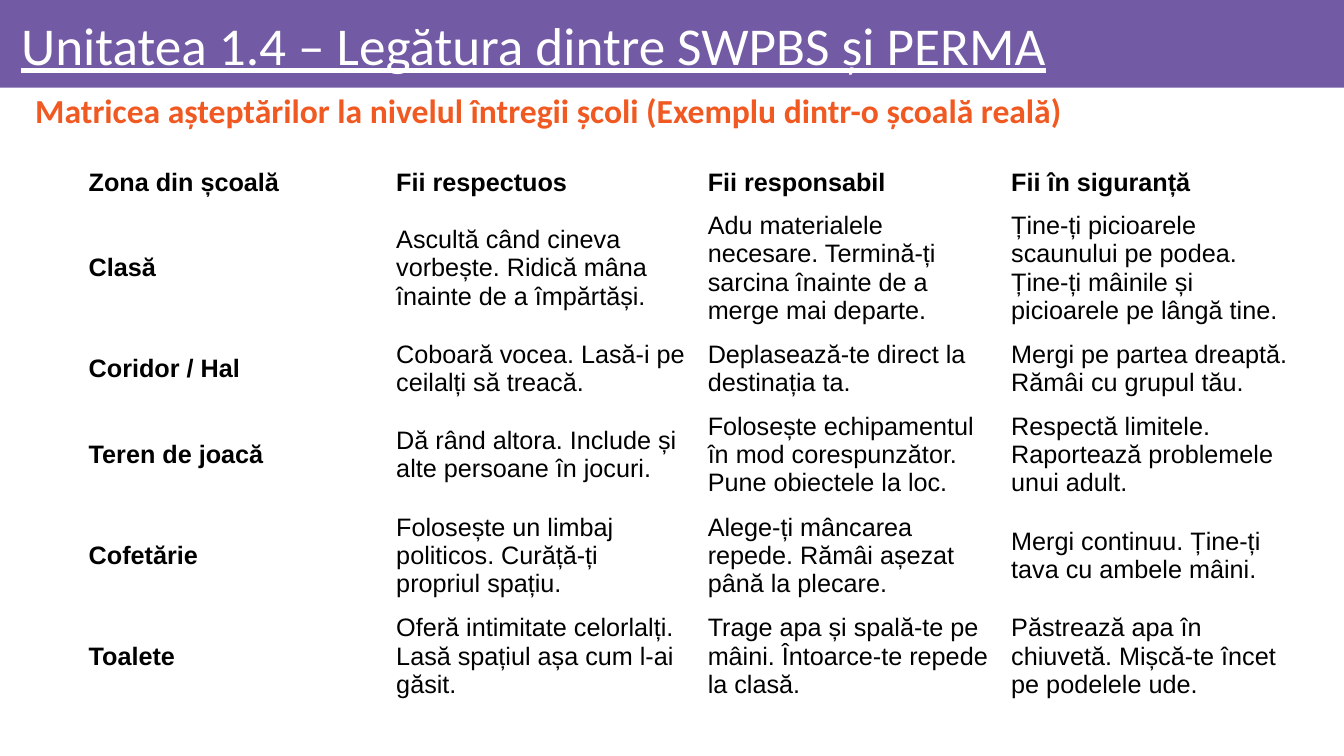
import pptx
import pptx.util
import pptx.dml.color
import pptx.enum.shapes
import pptx.enum.text

W, H = 13.33, 7.5
TITLE = "Unitatea 1.4 – Legătura dintre SWPBS și PERMA"
SUBTITLE = "Matricea așteptărilor la nivelul întregii școli (Exemplu dintr-o școală reală)"
MATRIX = [
    ("Zona din școală", "Fii respectuos", "Fii responsabil", "Fii în siguranță"),
    ("Clasă",
     "Ascultă când cineva vorbește. Ridică mâna înainte de a împărtăși.",
     "Adu materialele necesare. Termină-ți sarcina înainte de a merge mai departe.",
     "Ține-ți picioarele scaunului pe podea. Ține-ți mâinile și picioarele pe lângă tine."),
    ("Coridor / Hal",
     "Coboară vocea. Lasă-i pe ceilalți să treacă.",
     "Deplasează-te direct la destinația ta.",
     "Mergi pe partea dreaptă. Rămâi cu grupul tău."),
    ("Teren de joacă",
     "Dă rând altora. Include și alte persoane în jocuri.",
     "Folosește echipamentul în mod corespunzător. Pune obiectele la loc.",
     "Respectă limitele. Raportează problemele unui adult."),
    ("Cofetărie",
     "Folosește un limbaj politicos. Curăță-ți propriul spațiu.",
     "Alege-ți mâncarea repede. Rămâi așezat până la plecare.",
     "Mergi continuu. Ține-ți tava cu ambele mâini."),
    ("Toalete",
     "Oferă intimitate celorlalți. Lasă spațiul așa cum l-ai găsit.",
     "Trage apa și spală-te pe mâini. Întoarce-te repede la clasă.",
     "Păstrează apa în chiuvetă. Mișcă-te încet pe podelele ude."),
]
COLUMNS = (3.05, 3.09, 3.01, 3.05)
ROW = 0.25
BAR = 0.87

inch = pptx.util.Inches
MIDDLE = pptx.enum.text.MSO_ANCHOR.MIDDLE
LEFT = pptx.enum.text.PP_ALIGN.LEFT


def color(value):
    return pptx.dml.color.RGBColor.from_string(value)


def assign(obj, **values):
    for name, value in values.items():
        setattr(obj, name, value)


def place(sp, left, top, width, height):
    assign(sp, left=inch(left), top=inch(top), width=inch(width), height=inch(height))


def write(tf, text, hue, size, name, spacing=1.0, **font):
    p = tf.paragraphs[0]
    assign(p, alignment=LEFT, line_spacing=spacing)
    r = p.add_run()
    r.text = text
    assign(r.font, size=pptx.util.Pt(size), name=name, **font)
    r.font.color.rgb = color(hue)


def add_title(slide):
    bar = slide.shapes.add_shape(
        pptx.enum.shapes.MSO_SHAPE.RECTANGLE, 0, 0, inch(W), inch(BAR))
    bar.shadow.inherit = False
    bar.fill.solid()
    bar.fill.fore_color.rgb = color("735AA5")
    bar.line.fill.background()
    sp = slide.shapes.title
    sp._element.addprevious(bar._element)
    place(sp, 0.11, 0.09, 13.06, 0.78)
    assign(sp.text_frame, vertical_anchor=MIDDLE, word_wrap=True,
           margin_left=inch(0.1), margin_right=inch(0.06),
           margin_top=inch(0.06), margin_bottom=inch(0.06))
    write(sp.text_frame, TITLE, "FFFFFF", 38, "Calibri", 0.9, underline=True)


def add_subtitle(slide):
    sp = slide.shapes.add_textbox(0, inch(0.92), inch(13.06), inch(0.4))
    assign(sp.text_frame, vertical_anchor=MIDDLE, word_wrap=True,
           margin_left=inch(0.35), margin_top=0, margin_bottom=0)
    write(sp.text_frame, SUBTITLE, "F05A22", 24, "Calibri", 0.9, bold=True)


def add_matrix(slide):
    frame = slide.shapes.add_table(
        len(MATRIX), len(COLUMNS), inch(0.78), inch(1.61),
        inch(sum(COLUMNS)), inch(ROW * len(MATRIX)))
    table = frame.table
    assign(table, first_row=False, horz_banding=False)
    for column, width in zip(table.columns, COLUMNS):
        column.width = inch(width)
    for i, row in enumerate(MATRIX):
        for j, text in enumerate(row):
            cell = table.cell(i, j)
            cell.fill.background()
            cell.vertical_anchor = MIDDLE
            write(cell.text_frame, text, "000000", 18, "Arial", bold=i == 0 or j == 0)


def main():
    prs = pptx.Presentation()
    assign(prs, slide_width=inch(W), slide_height=inch(H))
    slide = prs.slides.add_slide(prs.slide_layouts[5])
    add_title(slide)
    add_subtitle(slide)
    add_matrix(slide)
    prs.save("out.pptx")


if __name__ == "__main__":
    main()
